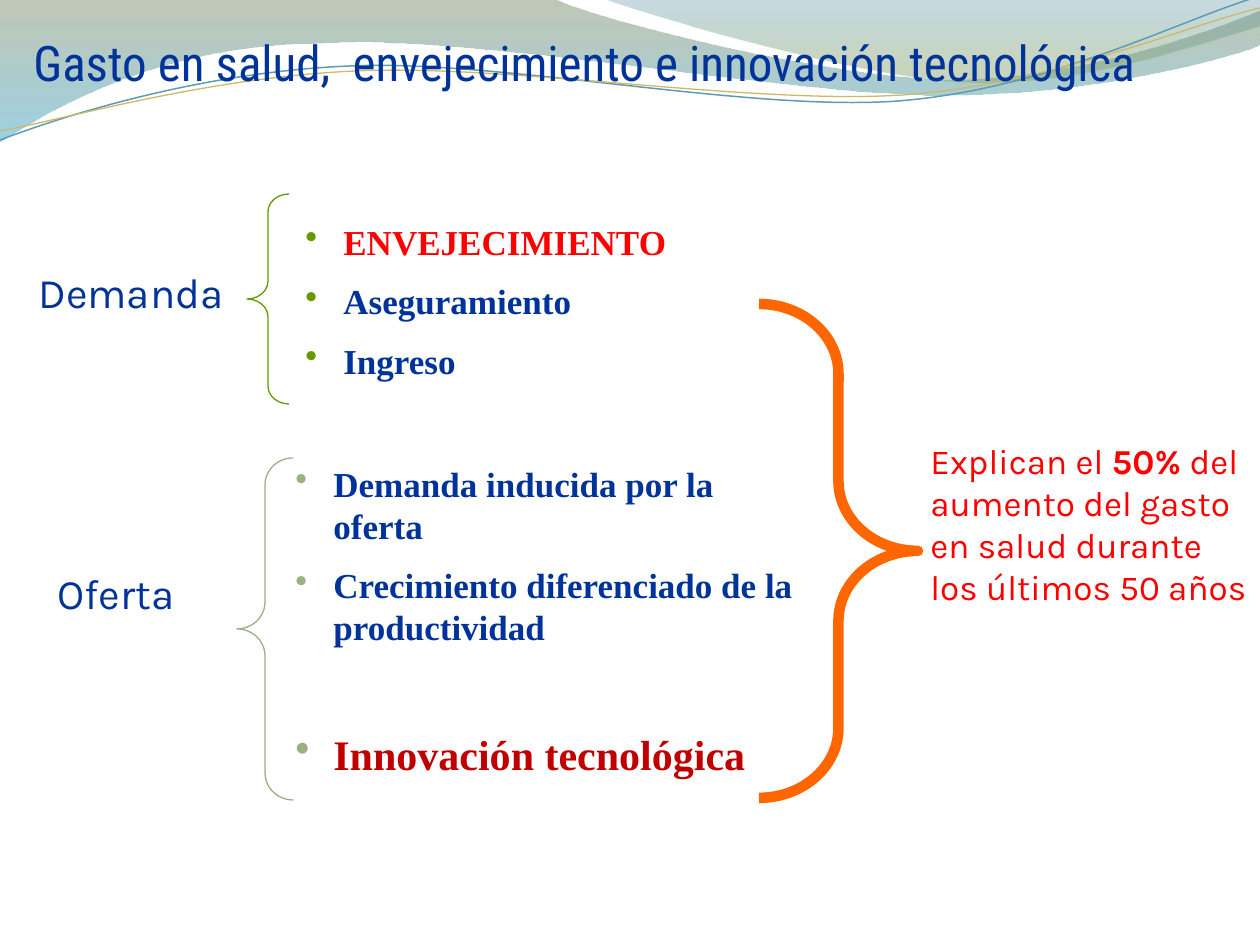
from dataclasses import dataclass

from lxml import etree
from pptx import Presentation
from pptx import util as u
from pptx.dml.color import RGBColor
from pptx.enum import shapes
from pptx.enum import text
from pptx.oxml.ns import qn

PX_PER_INCH = 126


def px(length):
    return round(length * 914400 / PX_PER_INCH)


def rgb(colour):
    return RGBColor.from_string(colour)


@dataclass(frozen=True)
class Theme:
    navy: str = "003399"
    red: str = "FF0000"
    dark_red: str = "C00000"
    green: str = "669900"
    sage: str = "9CB084"
    orange: str = "FF6600"
    blue_line: str = "5E9CB1"
    gold_line: str = "CEB966"
    # gradient stops: position, colour, opacity in percent
    band: tuple = ((0, "74855E", 45), (1, "4AACCE", 55))
    corner: tuple = ((0, "45889F", 30), (0.8, "8AA36D", 45))
    title_font: str = "Roboto Condensed"
    label_font: str = "Karla"
    list_font: str = "Times New Roman"
    title_size: int = 28
    large: int = 24
    body: int = 20


class SlidePainter:
    def __init__(self, slide, theme):
        self.slide = slide
        self.theme = theme

    def outline(self, start, segments, closed):
        """Draw segments: one point is a line, three are a cubic curve."""
        ends = [(px(x), px(y)) for x, y in (segment[-1] for segment in segments)]
        builder = self.slide.shapes.build_freeform(*map(px, start), scale=1.0)
        builder.add_line_segments(ends, close=closed)
        shape = builder.convert_to_shape()
        shape.shadow.inherit = False
        lines = list(shape._element.spPr.iter(qn("a:lnTo")))
        for line, segment in zip(lines, segments):
            if len(segment) == 3:
                line.addprevious(self.curve(shape, segment))
                line.getparent().remove(line)
        return shape

    def curve(self, shape, points):
        element = etree.Element(qn("a:cubicBezTo"))
        for x, y in points:
            etree.SubElement(element, qn("a:pt"), x=str(px(x) - shape.left),
                             y=str(px(y) - shape.top))
        return element

    def ribbon(self, start, segments, stops):
        shape = self.outline(start, segments, closed=True)
        shape.line.fill.background()
        shape.fill.gradient()
        shape.fill.gradient_angle = 270
        for stop, (position, colour, opacity) in zip(shape.fill.gradient_stops, stops):
            stop.position = position
            stop.color.rgb = rgb(colour)
        for colour, stop in zip(shape._element.spPr.iter(qn("a:srgbClr")), stops):
            etree.SubElement(colour, qn("a:alpha"), val=str(stop[2] * 1000))

    def wave(self, start, segments, colour, width):
        shape = self.outline(start, segments, closed=False)
        self.stroke(shape, colour, width)

    def brace(self, kind, frame, bend, colour, width):
        shape = self.slide.shapes.add_shape(kind, *map(px, frame))
        shape.adjustments[0] = bend
        shape.adjustments[1] = 0.5
        shape.shadow.inherit = False
        self.stroke(shape, colour, width)

    def stroke(self, shape, colour, width):
        shape.fill.background()
        shape.line.color.rgb = rgb(colour)
        shape.line.width = u.Pt(width)

    def frame(self, frame):
        box = self.slide.shapes.add_textbox(*map(px, frame))
        box.text_frame.word_wrap = True
        return box.text_frame

    def style(self, para, font, size, colour, bold=False):
        para.font.name = font
        para.font.size = u.Pt(size)
        para.font.color.rgb = rgb(colour)
        para.font.bold = bold

    def label(self, frame, words, font, size, colour, align=text.PP_ALIGN.LEFT):
        """Write one paragraph; words is a list of (text, bold) spans."""
        para = self.frame(frame).paragraphs[0]
        para.alignment = align
        for content, bold in words:
            span = para.add_run()
            span.text = content
            if bold:
                span.font.bold = True
        self.style(para, font, size, colour)

    def bullets(self, frame, bullet_colour, items):
        """Write a bulleted list; items are (text, size, colour, space before)."""
        text_frame = self.frame(frame)
        for index, (content, size, colour, gap) in enumerate(items):
            para = text_frame.add_paragraph() if index else text_frame.paragraphs[0]
            para.text = content
            if index:
                para.space_before = u.Pt(gap)
            props = para._p.get_or_add_pPr()
            props.set("marL", str(px(38)))
            props.set("indent", str(-px(38)))
            holder = etree.SubElement(props, qn("a:buClr"))
            etree.SubElement(holder, qn("a:srgbClr"), val=bullet_colour)
            etree.SubElement(props, qn("a:buChar"), char="•")
            self.style(para, self.theme.list_font, size, colour, bold=True)


def main():
    theme = Theme()
    deck = Presentation()
    deck.slide_width, deck.slide_height = px(1260), px(945)
    painter = SlidePainter(deck.slides.add_slide(deck.slide_layouts[6]), theme)

    painter.ribbon((0, -1), [
        [(554, -1)],
        [(600, 21), (837, 79), (955, 79)],
        [(1075, 79), (1207, 33), (1260, 11)],
        [(1261, 45)],
        [(1239, 55), (1096, 96), (940, 95)],
        [(784, 95), (481, 35), (324, 43)],
        [(163, 44), (58, 105), (-1, 142)],
    ], theme.band)
    painter.ribbon((604, -1), [
        [(642, 14), (859, 78), (969, 82)],
        [(1079, 87), (1211, 40), (1260, 26)],
        [(1260, 0)],
    ], theme.corner)
    painter.wave((0, 140), [
        [(60, 117), (199, 72), (349, 66)],
        [(498, 59), (747, 112), (898, 101)],
        [(1050, 89), (1182, 19), (1257, -3)],
    ], theme.blue_line, 0.85)
    painter.wave((0, 131), [
        [(59, 121), (207, 77), (357, 71)],
        [(508, 64), (752, 105), (903, 95)],
        [(1053, 84), (1185, 26), (1260, 8)],
    ], theme.gold_line, 0.75)

    for frame, word in (((6, 561, 220, 73), "Oferta"), ((5, 260, 252, 73), "Demanda")):
        painter.label(frame, [(word, False)], theme.label_font, theme.large,
                      theme.navy, text.PP_ALIGN.CENTER)

    painter.bullets((293, 214, 406, 180), theme.green, [
        ("ENVEJECIMIENTO", theme.body, theme.red, 0),
        ("Aseguramiento", theme.body, theme.navy, 10),
        ("Ingreso", theme.body, theme.navy, 10),
    ])
    painter.bullets((283, 456, 533, 344), theme.sage, [
        ("Demanda inducida por la oferta", theme.body, theme.navy, 0),
        ("Crecimiento diferenciado de la productividad", theme.body, theme.navy, 10),
        ("Innovación tecnológica", theme.large, theme.dark_red, 46),
    ])

    left, right = shapes.MSO_SHAPE.LEFT_BRACE, shapes.MSO_SHAPE.RIGHT_BRACE
    painter.brace(left, (237, 458, 56, 342), 0.48, theme.sage, 0.75)
    painter.brace(left, (247, 194, 42, 210), 0.42, theme.green, 0.75)
    painter.brace(right, (759, 304, 159, 494), 0.44, theme.orange, 6)

    painter.label((918, 433, 347, 221), [
        ("Explican el ", False), ("50%", True),
        (" del aumento del gasto en salud durante los últimos 50 años", False),
    ], theme.label_font, theme.body, theme.red)
    painter.label((21, 26, 1239, 84),
                  [("Gasto en salud,  envejecimiento e innovación tecnológica", False)],
                  theme.title_font, theme.title_size, theme.navy)
    deck.save("out.pptx")


if __name__ == "__main__":
    main()
